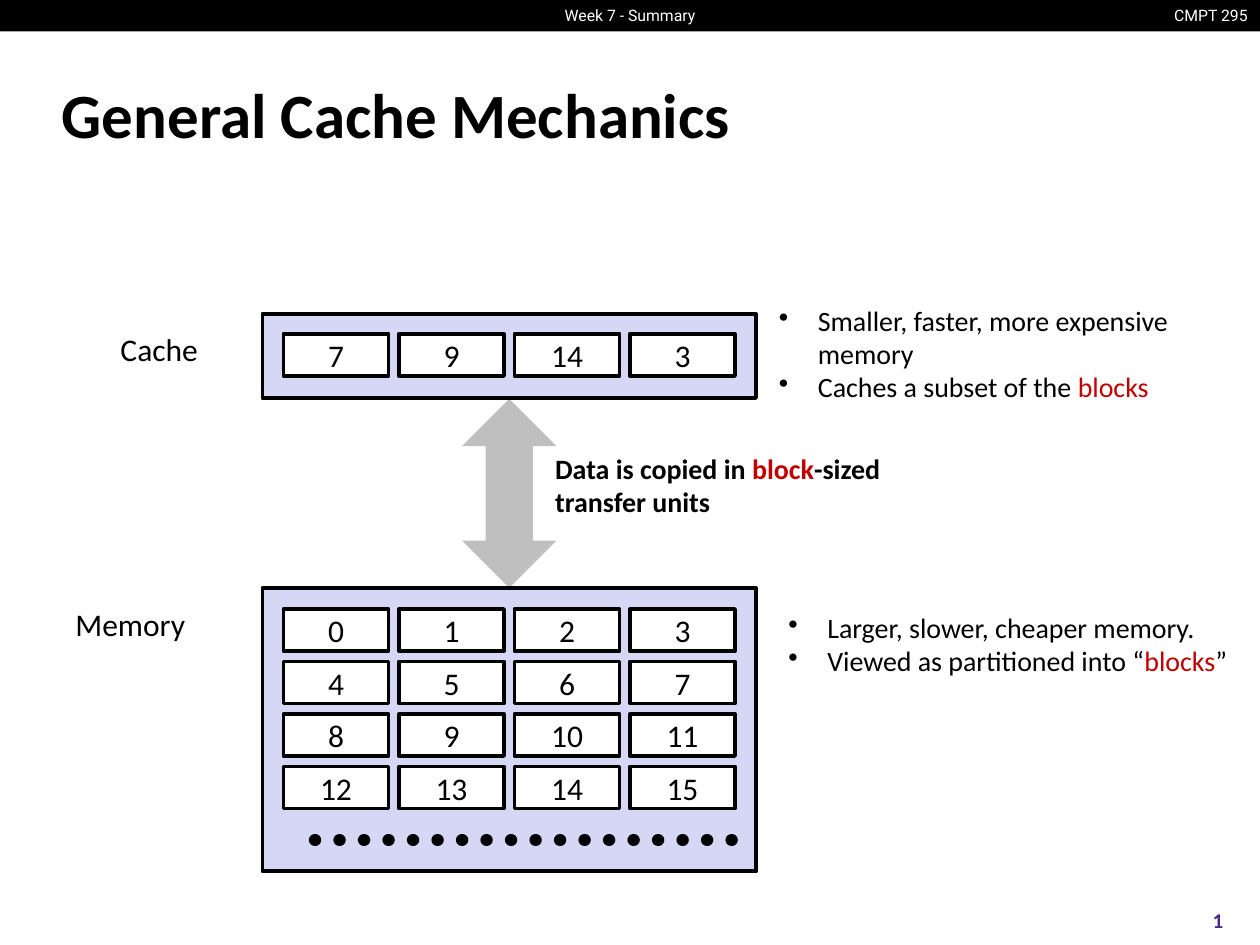
"""Builds the cache mechanics slide on a grid of 120 columns by 90 rows."""
from dataclasses import dataclass

from lxml import etree
from pptx import Presentation
from pptx.dml.color import RGBColor
from pptx.enum.dml import MSO_LINE
from pptx.enum.shapes import MSO_CONNECTOR, MSO_SHAPE
from pptx.enum.text import MSO_ANCHOR, PP_ALIGN
from pptx.oxml.ns import qn
from pptx.util import Inches, Pt

LEFT, MID, RIGHT = PP_ALIGN.LEFT, PP_ALIGN.CENTER, PP_ALIGN.RIGHT
TOP, CENTER = MSO_ANCHOR.TOP, MSO_ANCHOR.MIDDLE
RECT, ARROW = MSO_SHAPE.RECTANGLE, MSO_SHAPE.UP_DOWN_ARROW
DOTS, STRAIGHT = MSO_LINE.ROUND_DOT, MSO_CONNECTOR.STRAIGHT
COLS = 4


@dataclass(frozen=True)
class Theme:
    """Colours, fonts and type sizes."""
    ink: str = "000000"
    paper: str = "FFFFFF"
    panel: str = "D6D6F5"
    arrow: str = "BFBFBF"
    accent: str = "C00000"
    page: str = "4B2A85"
    body: str = "Calibri"
    head: str = "Roboto"
    title: int = 36
    label: int = 18
    note: int = 16
    foot: int = 12
    bar: int = 9
    edge: float = 2.25
    dot: int = 7


@dataclass(frozen=True)
class Box:
    """A place on the grid, in columns and rows."""
    x: float
    y: float
    w: float
    h: float


@dataclass(frozen=True)
class Text:
    """A block of lines; words between asterisks take the accent colour."""
    box: Box
    lines: tuple[str, ...]
    size: int
    color: str
    font: str = "Calibri"
    bold: bool = False
    align: PP_ALIGN = LEFT
    anchor: MSO_ANCHOR = CENTER
    bullet: bool = False
    gap: float = 1.0


@dataclass(frozen=True)
class Store:
    """A panel and the blocks it holds."""
    box: Box
    top: float
    blocks: tuple[int, ...]


THEME = Theme()
STORES = (
    Store(Box(25, 56, 47, 27), 58, tuple(range(16))),
    Store(Box(25, 29.9, 47, 8), 31.8, (7, 9, 14, 3)),
)
TEXTS = (
    Text(Box(110.3, 0, 9.7, 3), ("CMPT 295",), THEME.bar, THEME.paper,
         THEME.head, align=RIGHT, anchor=TOP),
    Text(Box(51.5, 0, 17, 3), ("Week 7 - Summary",), THEME.bar, THEME.paper,
         THEME.head, align=MID, anchor=TOP),
    Text(Box(4.7, 5.8, 110.3, 10), ("General Cache Mechanics",), THEME.title,
         THEME.ink, bold=True),
    Text(Box(112, 85.2, 8, 4.8), ("1",), THEME.foot, THEME.page, bold=True,
         align=MID),
    Text(Box(10.3, 30.8, 12.5, 6), ("Cache",), THEME.label, THEME.ink,
         anchor=TOP),
    Text(Box(6, 57, 16.8, 6), ("Memory",), THEME.label, THEME.ink, anchor=TOP),
    Text(Box(73.9, 57.6, 46.1, 7.6),
         ("Larger, slower, cheaper memory.",
          "Viewed as partitioned into “*blocks*”"),
         THEME.note, THEME.ink, bullet=True, gap=0.98),
    Text(Box(51.7, 42.5, 37.2, 7.6),
         ("Data is copied in *block*-sized transfer units",),
         THEME.note, THEME.ink, bold=True, gap=0.98),
    Text(Box(73, 28.4, 44.6, 10.7),
         ("Smaller, faster, more expensive memory",
          "Caches a subset of the *blocks*"),
         THEME.note, THEME.ink, bullet=True, gap=0.98),
)


def unit(n: float) -> int:
    """Turns grid steps into a length."""
    return Inches(n / 12)


def place(box: Box) -> tuple[int, ...]:
    """Gives left, top, width and height."""
    return tuple(unit(n) for n in (box.x, box.y, box.w, box.h))


def tint(code: str) -> RGBColor:
    """Reads a colour code."""
    return RGBColor.from_string(code)


def draw(slide, kind: MSO_SHAPE, box: Box, fill: str, edge: bool = False):
    """Draws a filled shape, outlined if asked."""
    shape = slide.shapes.add_shape(kind, *place(box))
    shape.shadow.inherit = False
    shape.fill.solid()
    shape.fill.fore_color.rgb = tint(fill)
    if edge:
        shape.line.color.rgb = tint(THEME.ink)
        shape.line.width = Pt(THEME.edge)
    else:
        shape.line.fill.background()
    return shape


def fill_text(frame, text: Text) -> None:
    """Writes a block of lines into a text frame."""
    frame.word_wrap = True
    frame.vertical_anchor = text.anchor
    for i, line in enumerate(text.lines):
        para = frame.paragraphs[0] if i == 0 else frame.add_paragraph()
        para.alignment = text.align
        para.line_spacing = text.gap
        font = para.font
        font.name, font.size, font.bold = text.font, Pt(text.size), text.bold
        font.color.rgb = tint(text.color)
        if text.bullet:
            props = para._p.get_or_add_pPr()
            props.set("marL", str(Inches(0.31)))
            props.set("indent", str(-Inches(0.31)))
            mark = etree.Element(qn("a:buChar"), char="•")
            props.find(qn("a:defRPr")).addprevious(mark)
        for j, part in enumerate(line.split("*")):
            if part:
                run = para.add_run()
                run.text = part
                run.font.color.rgb = tint(THEME.accent if j % 2 else text.color)


def add_text(slide, text: Text) -> None:
    """Adds a text box."""
    fill_text(slide.shapes.add_textbox(*place(text.box)).text_frame, text)


def add_store(slide, store: Store) -> None:
    """Draws a panel with its rows of numbered blocks."""
    draw(slide, RECT, store.box, THEME.panel, True)
    for i, block in enumerate(store.blocks):
        row, col = divmod(i, COLS)
        box = Box(store.box.x + 2 + 11 * col, store.top + 5 * row, 10, 4)
        cell = draw(slide, RECT, box, THEME.paper, True)
        fill_text(cell.text_frame, Text(box, (str(block),), THEME.label,
                                        THEME.ink, align=MID))


def add_dots(slide, left: float, right: float, y: float) -> None:
    """Draws a row of round dots."""
    row = slide.shapes.add_connector(STRAIGHT, unit(left), unit(y),
                                     unit(right), unit(y))
    row.line.color.rgb = tint(THEME.ink)
    row.line.width = Pt(THEME.dot)
    row.line.dash_style = DOTS
    props = row._element.spPr
    props.find(qn("a:ln")).set("cap", "rnd")
    etree.SubElement(props, qn("a:effectLst"))


def main() -> None:
    """Builds and saves the slide."""
    deck = Presentation()
    deck.slide_width, deck.slide_height = unit(120), unit(90)
    slide = deck.slides.add_slide(deck.slide_layouts[6])
    draw(slide, RECT, Box(0, 0, 120, 3), THEME.ink)
    draw(slide, ARROW, Box(44, 38, 9, 18), THEME.arrow)
    for store in STORES:
        add_store(slide, store)
    add_dots(slide, 30, 70, 80)
    for text in TEXTS:
        add_text(slide, text)
    deck.save("out.pptx")


if __name__ == "__main__":
    main()
